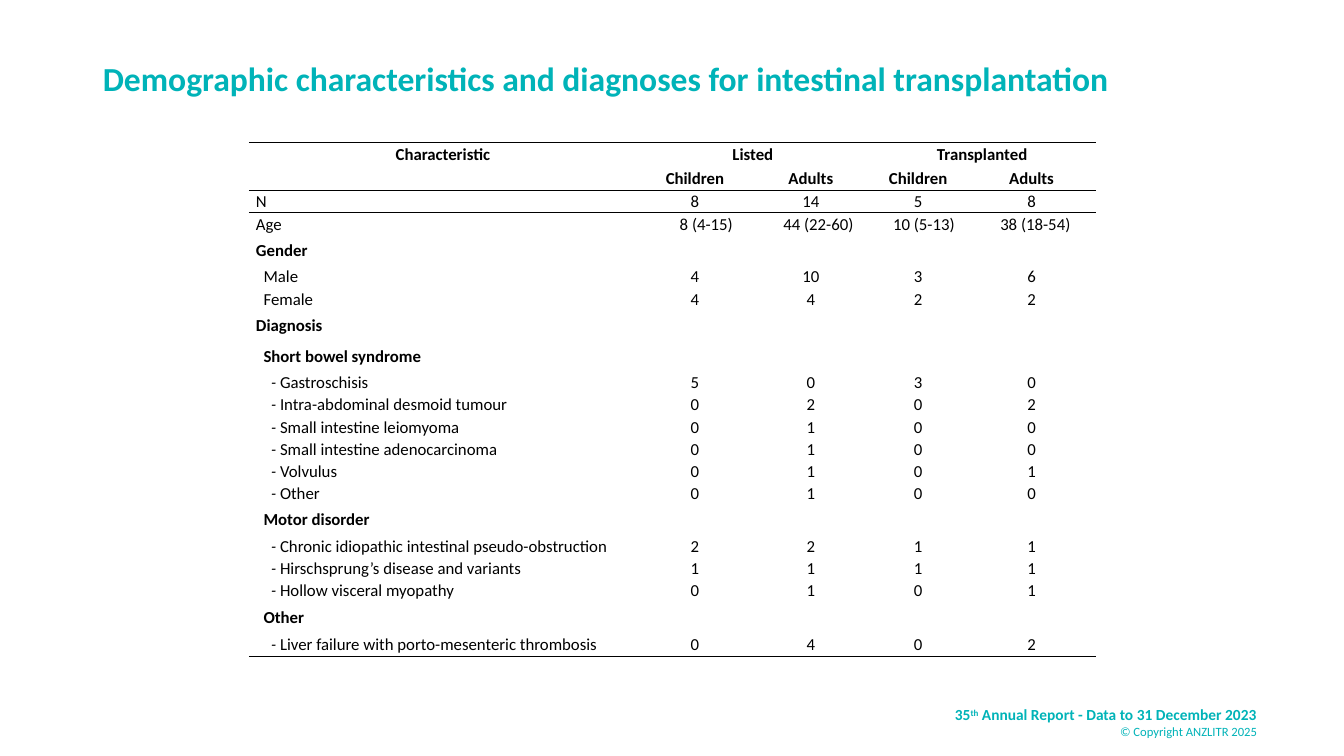
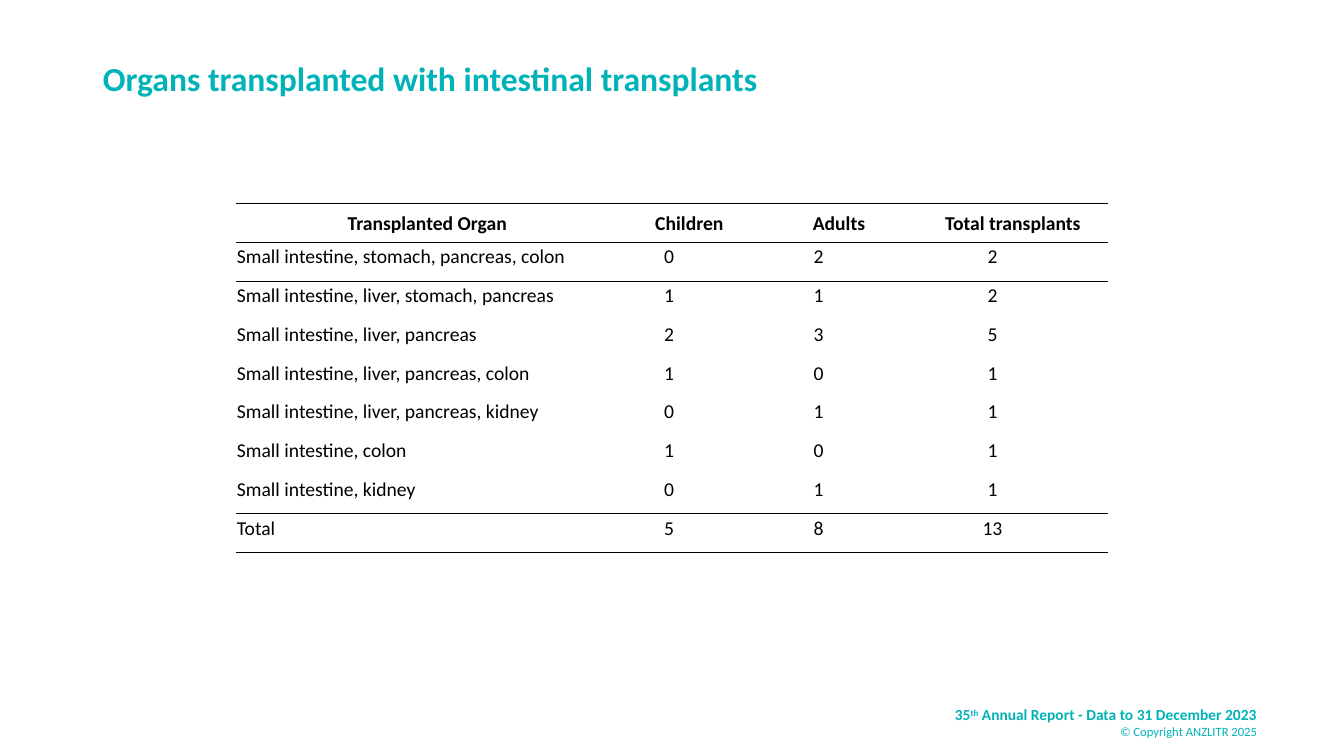
from dataclasses import dataclass

import pptx
import pptx.dml.color
import pptx.enum.text
import pptx.oxml
import pptx.oxml.ns
import pptx.util
from pptx.presentation import Presentation as Deck
from pptx.slide import Slide

EMU_PER_PX = 4572  # 200 px to the inch
ALIGN = pptx.enum.text.PP_ALIGN
ANCHOR = pptx.enum.text.MSO_ANCHOR
PLAIN_TABLE_STYLE = "{2D5ABB26-0587-4C30-8999-92F81FD0307C}"


@dataclass(frozen=True)
class Theme:
    font: str = "Calibri"
    teal: str = "00B3B8"
    black: str = "000000"
    white: str = "FFFFFF"
    title_size: int = 24
    report_size: int = 11
    copyright_size: int = 9
    rule_width: int = 1
    title_spacing: float = 0.9
    table_spacing: float = 1.07


THEME = Theme()


@dataclass(frozen=True)
class Row:
    label: str
    values: tuple[str, ...] = ()
    height: int = 44
    level: int = 0
    bold: bool = False
    dashed: bool = False
    header: bool = False
    nudges: tuple[int, ...] = ()  # extra left margin of each value


@dataclass(frozen=True)
class TableSpec:
    left: int
    top: int
    columns: tuple[int, ...]
    rows: tuple[Row, ...]
    rules: tuple[int, ...]  # row boundaries with a line, 0 being the top
    text_size: int
    side_margin: int
    edge_margin: int
    body_anchor: ANCHOR
    value_right_indent: int = 0
    filled: bool = False
    spans: tuple[tuple[int, int, int], ...] = ()  # row, first and last column


def px(length: int) -> pptx.util.Emu:
    return pptx.util.Emu(length * EMU_PER_PX)


def style_font(paragraph, size: int, color: str, bold: bool) -> None:
    font = paragraph.font
    font.name = THEME.font
    font.size = pptx.util.Pt(size)
    font.bold = bold
    font.color.rgb = pptx.dml.color.RGBColor.from_string(color)


# Shared slide parts

def add_footer(slide: Slide) -> None:
    footer = slide.shapes.add_textbox(px(1614), px(1390), px(900), px(80))
    frame = footer.text_frame
    frame.word_wrap = True
    report = frame.paragraphs[0]
    for text, raised in (("35", False), ("th", True),
                         (" Annual Report - Data to 31 December 2023", False)):
        run = report.add_run()
        run.text = text
        if raised:
            run._r.get_or_add_rPr().set("baseline", "30000")
    copyright_line = frame.add_paragraph()
    copyright_line.text = "© Copyright ANZLITR 2025"
    for paragraph, size, bold in (
            (report, THEME.report_size, True),
            (copyright_line, THEME.copyright_size, False)):
        paragraph.alignment = ALIGN.RIGHT
        style_font(paragraph, size, THEME.teal, bold)


def add_titled_slide(deck: Deck, heading: str) -> Slide:
    slide = deck.slides.add_slide(deck.slide_layouts[5])
    add_footer(slide)
    title = slide.shapes.title
    title.left, title.top = px(184), px(54)
    title.width, title.height = px(2300), px(210)
    frame = title.text_frame
    frame.text = heading
    frame.word_wrap = True
    frame.vertical_anchor = ANCHOR.MIDDLE
    paragraph = frame.paragraphs[0]
    paragraph.alignment = ALIGN.LEFT
    paragraph.line_spacing = THEME.title_spacing
    style_font(paragraph, THEME.title_size, THEME.teal, True)
    return slide


# Tables

def add_rule(cell, side: str) -> None:
    width = pptx.util.Pt(THEME.rule_width)
    cell._tc.get_or_add_tcPr().append(pptx.oxml.parse_xml(
        f'<a:{side} {pptx.oxml.ns.nsdecls("a")} w="{width}"><a:solidFill>'
        f'<a:srgbClr val="{THEME.black}"/></a:solidFill></a:{side}>'))


def fill_cell(cell, spec: TableSpec, row: Row, column: int) -> None:
    is_label = column == 0
    nudge = 0
    if is_label:
        text = row.label
        nudge = 15 * row.level
    else:
        text = row.values[column - 1] if row.values else ""
        if row.nudges:
            nudge = row.nudges[column - 1]
    right_indent = 0 if is_label or row.header else spec.value_right_indent
    cell.margin_left = px(spec.side_margin + nudge)
    cell.margin_right = px(spec.side_margin + right_indent)
    cell.margin_top = cell.margin_bottom = px(spec.edge_margin)
    cell.vertical_anchor = ANCHOR.MIDDLE if row.header else spec.body_anchor

    paragraph = cell.text_frame.paragraphs[0]
    paragraph.line_spacing = THEME.table_spacing
    centred = row.header or not is_label
    paragraph.alignment = ALIGN.CENTER if centred else ALIGN.LEFT
    style_font(paragraph, spec.text_size, THEME.black, row.bold or row.header)
    if is_label and row.dashed:
        dash = paragraph.add_run()
        dash.text = "- "
        dash.font.italic = True
    if text:
        paragraph.add_run().text = text


def add_ruled_table(slide: Slide, spec: TableSpec) -> None:
    frame = slide.shapes.add_table(
        len(spec.rows), len(spec.columns), px(spec.left), px(spec.top),
        px(sum(spec.columns)), px(sum(row.height for row in spec.rows)))
    table = frame.table
    table.first_row = table.horz_banding = False
    for style_id in frame.element.iter(pptx.oxml.ns.qn("a:tableStyleId")):
        style_id.text = PLAIN_TABLE_STYLE
    for column, width in enumerate(spec.columns):
        table.columns[column].width = px(width)

    for index, row in enumerate(spec.rows):
        table.rows[index].height = px(row.height)
        for column in range(len(spec.columns)):
            cell = table.cell(index, column)
            fill_cell(cell, spec, row, column)
            for side, boundary in (("lnT", index), ("lnB", index + 1)):
                if boundary in spec.rules:
                    add_rule(cell, side)
            if spec.filled:
                cell.fill.solid()
                cell.fill.fore_color.rgb = (
                    pptx.dml.color.RGBColor.from_string(THEME.white))
            else:
                cell.fill.background()
    for index, first, last in spec.spans:
        table.cell(index, first).merge(table.cell(index, last))


# Row kinds

def group(label: str, level: int = 0) -> Row:
    return Row(label, height=61, level=level, bold=True)


def diagnosis(label: str, *counts: str, height: int = 44) -> Row:
    return Row(label, counts, height, level=2, dashed=True)


def organs(label: str, *counts: str, header: bool = False) -> Row:
    return Row(label, counts, 77, header=header)


# Content

DEMOGRAPHICS = TableSpec(
    left=494, top=283, columns=(770, 230, 230, 196, 254),
    text_size=12, side_margin=14, edge_margin=0, body_anchor=ANCHOR.MIDDLE,
    rules=(0, 2, 21), spans=((0, 1, 2), (0, 3, 4)),
    rows=(
        Row("Characteristic", ("Listed", "", "Transplanted", ""), 46,
            header=True),
        Row("", ("Children", "Adults") * 2, 49, header=True),
        Row("N", ("8", "14", "5", "8")),
        Row("Age", ("8 (4-15)", "44 (22-60)", "10 (5-13)", "38 (18-54)"),
            nudges=(45, 30, 23, 15)),
        group("Gender"),
        Row("Male", ("4", "10", "3", "6"), level=1),
        Row("Female", ("4", "4", "2", "2"), level=1),
        group("Diagnosis"),
        group("Short bowel syndrome", 1),
        diagnosis("Gastroschisis", "5", "0", "3", "0"),
        diagnosis("Intra-abdominal desmoid tumour", "0", "2", "0", "2"),
        diagnosis("Small intestine leiomyoma", "0", "1", "0", "0"),
        diagnosis("Small intestine adenocarcinoma", "0", "1", "0", "0"),
        diagnosis("Volvulus", "0", "1", "0", "1"),
        diagnosis("Other", "0", "1", "0", "0"),
        group("Motor disorder", 1),
        diagnosis("Chronic idiopathic intestinal pseudo-obstruction",
                  "2", "2", "1", "1"),
        diagnosis("Hirschsprung’s disease and variants", "1", "1", "1", "1"),
        diagnosis("Hollow visceral myopathy", "0", "1", "0", "1"),
        group("Other", 1),
        diagnosis("Liver failure with porto-mesenteric thrombosis",
                  "0", "4", "0", "2", height=48),
    ))

ORGANS = TableSpec(
    left=468, top=404, columns=(760, 280, 314, 376),
    text_size=14, side_margin=2, edge_margin=2, body_anchor=ANCHOR.TOP,
    rules=(0, 1, 8, 9), value_right_indent=81, filled=True,
    rows=(
        organs("Transplanted Organ", "Children", "Adults",
               "Total transplants", header=True),
        organs("Small intestine, stomach, pancreas, colon", "0", "2", "2"),
        organs("Small intestine, liver, stomach, pancreas", "1", "1", "2"),
        organs("Small intestine, liver, pancreas", "2", "3", "5"),
        organs("Small intestine, liver, pancreas, colon", "1", "0", "1"),
        organs("Small intestine, liver, pancreas, kidney", "0", "1", "1"),
        organs("Small intestine, colon", "1", "0", "1"),
        organs("Small intestine, kidney", "0", "1", "1"),
        organs("Total", "5", "8", "13"),
    ))

SLIDES = (
    ("Demographic characteristics and diagnoses for intestinal "
     "transplantation", DEMOGRAPHICS),
    ("Organs transplanted with intestinal transplants", ORGANS),
)


def main() -> None:
    deck = pptx.Presentation()
    deck.slide_width, deck.slide_height = px(2667), px(1500)
    for heading, spec in SLIDES:
        add_ruled_table(add_titled_slide(deck, heading), spec)
    deck.save("out.pptx")


if __name__ == "__main__":
    main()
